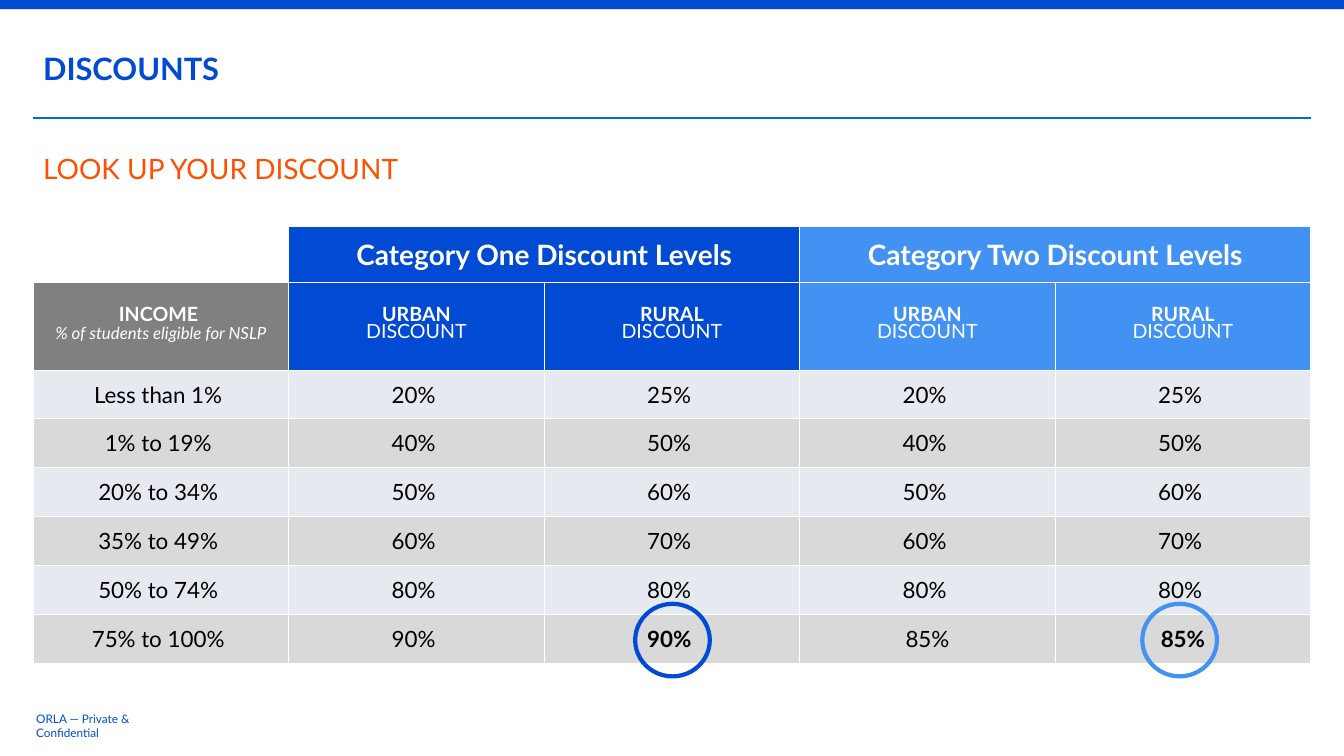
from dataclasses import dataclass

from lxml import etree
from pptx import Presentation
from pptx.dml.color import RGBColor
from pptx.enum.shapes import MSO_CONNECTOR, MSO_SHAPE
from pptx.enum.text import MSO_ANCHOR, PP_ALIGN
from pptx.oxml import parse_xml
from pptx.oxml.ns import nsdecls, qn
from pptx.util import Inches, Pt

CENTER, LEFT = PP_ALIGN.CENTER, PP_ALIGN.LEFT
MIDDLE = MSO_ANCHOR.MIDDLE
RECT, OVAL = MSO_SHAPE.RECTANGLE, MSO_SHAPE.OVAL
STRAIGHT = MSO_CONNECTOR.STRAIGHT


@dataclass(frozen=True)
class Theme:
    """Colours, font and type sizes."""
    font: str = "Lato"
    blue: str = "004AD4"
    sky: str = "4292F4"
    orange: str = "FE5000"
    rule: str = "0070C0"
    grey: str = "808080"
    band_a: str = "E7E9F0"
    band_b: str = "D9D9D9"
    white: str = "FFFFFF"
    black: str = "000000"
    heading: float = 22
    title: float = 20
    body: float = 16
    label: float = 14
    note: float = 12
    footer: float = 8.4


T = Theme()
CATEGORIES = [("Category One Discount Levels", T.blue),
              ("Category Two Discount Levels", T.sky)]
AREAS = ["URBAN", "RURAL"]
DISCOUNTS = [
    ("Less than 1% ", "20% ", "25% ", "20% ", "25% "),
    ("1% to 19% ", "40% ", "50% ", "40% ", "50% "),
    ("20% to 34% ", "50% ", "60% ", "50% ", "60% "),
    ("35% to 49% ", "60% ", "70% ", "60% ", "70% "),
    ("50% to 74% ", "80% ", "80% ", "80% ", "80% "),
    ("75% to 100% ", "90% ", "90% ", "85%", "85%"),
]
TOP_RATES = {(5, 2), (5, 4)}


def rgb(code):
    """Return a colour from its hex code."""
    return RGBColor.from_string(code)


def add_text(p, text, size=T.body, color=T.black, bold=False, italic=False, align=LEFT):
    """Append a formatted run to a paragraph."""
    p.alignment = align
    r = p.add_run()
    r.text = text
    r.font.name, r.font.size = T.font, Pt(size)
    r.font.bold, r.font.italic = bold, italic
    r.font.color.rgb = rgb(color)


def add_label(slide, box, text, inset=(0.1, 0.05), **fmt):
    """Add a vertically centred text box."""
    tf = slide.shapes.add_textbox(*map(Inches, box)).text_frame
    tf.word_wrap, tf.vertical_anchor = True, MIDDLE
    tf.margin_left = tf.margin_right = Inches(inset[0])
    tf.margin_top = tf.margin_bottom = Inches(inset[1])
    add_text(tf.paragraphs[0], text, **fmt)


def add_shape(slide, kind, box, fill=None, line=None):
    """Add a plain shape with an optional fill and outline."""
    sp = slide.shapes.add_shape(kind, *map(Inches, box))
    sp.shadow.inherit = False
    if fill:
        sp.fill.solid()
        sp.fill.fore_color.rgb = rgb(fill)
    else:
        sp.fill.background()
    if line:
        sp.line.color.rgb, sp.line.width = rgb(line), Pt(3)
    else:
        sp.line.fill.background()


def add_frame(slide, left, top, width, height):
    """Draw the top bar, header rule and footer."""
    add_shape(slide, RECT, (left, top, width, 0.09), fill=T.blue)
    x, y = left + 0.33, top + 1.17
    rule = slide.shapes.add_connector(
        STRAIGHT, Inches(x), Inches(y), Inches(left + width - 0.33), Inches(y))
    rule.line.color.rgb, rule.line.width = rgb(T.rule), Pt(1.25)
    etree.SubElement(rule._element.spPr, qn("a:effectLst"))
    add_label(slide, (x, top + height - 0.4, 1.56, 0.2), "ORLA — Private & Confidential",
              inset=(0.03, 0.03), size=T.footer, color=T.blue)


def add_headings(slide, left, top, width):
    """Place the section heading and the slide title."""
    add_label(slide, (left, top, width, 0.69), "DISCOUNTS",
              size=T.heading, color=T.blue, bold=True)
    add_label(slide, (left, top + 1, width, 0.67), "LOOK UP YOUR DISCOUNT",
              size=T.title, color=T.orange)


def style_cell(cell, fill=None):
    """Give a cell its borders, insets and fill, and return its paragraph."""
    cell.margin_left = cell.margin_right = cell.margin_top = cell.margin_bottom = 0
    cell.vertical_anchor = MIDDLE
    tc_pr = cell._tc.get_or_add_tcPr()
    for side in "LRTB":
        tc_pr.append(parse_xml(
            f'<a:ln{side} {nsdecls("a")} w="6350"><a:solidFill>'
            f'<a:srgbClr val="{T.white}"/></a:solidFill></a:ln{side}>'))
    if fill:
        cell.fill.solid()
        cell.fill.fore_color.rgb = rgb(fill)
    else:
        cell.fill.background()
    return cell.text_frame.paragraphs[0]


def add_two_lines(p, first, second, size=T.label, italic=False):
    """Write a bold line above a plain one."""
    p.line_spacing = Pt(12)
    add_text(p, first, size=T.label, color=T.white, bold=True, align=CENTER)
    p.add_line_break()
    add_text(p, second, size=size, color=T.white, italic=italic, align=CENTER)


def add_discount_table(slide, left, top, width, height):
    """Build the discount table and ring its highest rural rates."""
    heads = [0.55, 0.87]
    row_h = (height - sum(heads)) / len(DISCOUNTS)
    heights = heads + [row_h] * len(DISCOUNTS)
    cols = len(DISCOUNTS[0])
    frame = slide.shapes.add_table(
        len(heights), cols, *map(Inches, (left, top, width, height)))
    table = frame.table
    table.first_row = table.horz_banding = False
    for row, h in zip(table.rows, heights):
        row.height = Inches(h)
    for col in table.columns:
        col.width = Inches(width / cols)

    style_cell(table.cell(0, 0))
    add_two_lines(style_cell(table.cell(1, 0), T.grey), "INCOME ",
                  "% of students eligible for NSLP", size=T.note, italic=True)
    for i, (name, color) in enumerate(CATEGORIES):
        first = 1 + i * len(AREAS)
        for j, area in enumerate(AREAS):
            p = style_cell(table.cell(0, first + j), color)
            if j == 0:
                add_text(p, name, size=T.title, color=T.white, bold=True, align=CENTER)
            add_two_lines(style_cell(table.cell(1, first + j), color), area, "DISCOUNT")
        table.cell(0, first).merge(table.cell(0, first + len(AREAS) - 1))

    for i, values in enumerate(DISCOUNTS):
        band = T.band_b if i % 2 else T.band_a
        for j, value in enumerate(values):
            p = style_cell(table.cell(i + len(heads), j), band)
            add_text(p, value, bold=(i, j) in TOP_RATES, align=CENTER)

    for x, (_, color) in zip((5.97, 11), CATEGORIES):
        add_shape(slide, OVAL, (left + x, top + 3.74, 0.74, 0.72), line=color)


def main():
    """Build and save the slide."""
    prs = Presentation()
    prs.slide_width, prs.slide_height = Inches(13.33), Inches(7.5)
    slide = prs.slides.add_slide(prs.slide_layouts[6])
    add_frame(slide, 0, 0, 13.33, 7.5)
    add_headings(slide, 0.33, 0.33, 12.67)
    add_discount_table(slide, 0.33, 2.25, 12.67, 4.33)
    prs.save("out.pptx")


if __name__ == "__main__":
    main()
